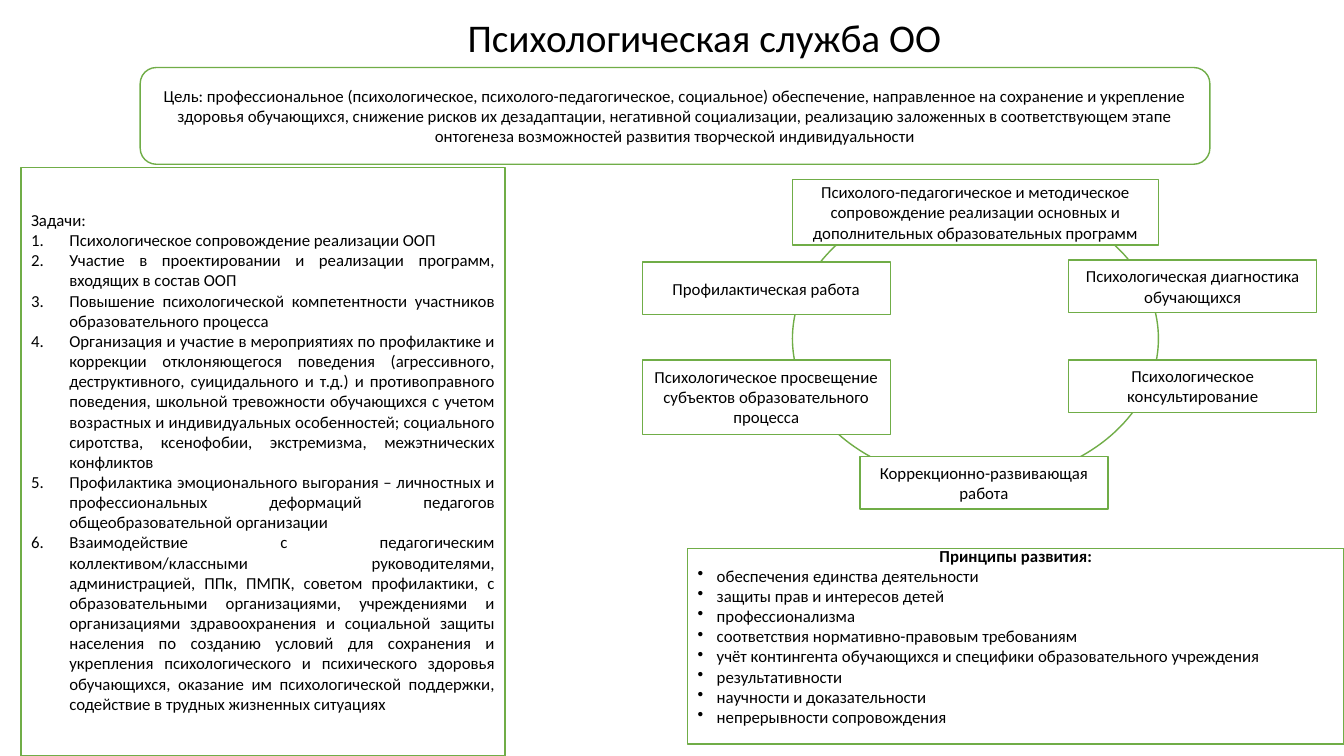
import dataclasses

import lxml.etree
import pptx
import pptx.dml.color
import pptx.enum.shapes
import pptx.enum.text
import pptx.oxml.ns
import pptx.util

Inches = pptx.util.Inches
Align = pptx.enum.text.PP_ALIGN
Preset = pptx.enum.shapes.MSO_SHAPE


@dataclasses.dataclass(frozen=True)
class Theme:
    font: str = "Calibri"
    title_size: int = 28
    body_size: int = 12
    text: str = "000000"
    fill: str = "FFFFFF"
    outline: str = "70AD47"


theme = Theme()


def add_box(shapes, preset, left, top, width, height):
    """Add an outlined shape with wrapped, vertically centred text."""
    box = shapes.add_shape(preset, Inches(left), Inches(top), Inches(width), Inches(height))
    box.shadow.inherit = False
    box.fill.solid()
    box.fill.fore_color.rgb = pptx.dml.color.RGBColor.from_string(theme.fill)
    box.line.color.rgb = pptx.dml.color.RGBColor.from_string(theme.outline)
    box.line.width = pptx.util.Pt(1)
    box.text_frame.word_wrap = True
    box.text_frame.vertical_anchor = pptx.enum.text.MSO_ANCHOR.MIDDLE
    return box


def write(frame, lines, align, size=theme.body_size, bold=False, marker=None, indent=0):
    """Append lines to a text frame; marker is a bullet element name with its attributes."""
    for line in lines:
        first = frame.paragraphs[0]
        paragraph = frame.add_paragraph() if first.runs else first
        paragraph.alignment = align
        run = paragraph.add_run()
        run.text = line
        font_format = {"name": theme.font, "size": pptx.util.Pt(size), "bold": bold}
        for attribute, value in font_format.items():
            setattr(run.font, attribute, value)
        run.font.color.rgb = pptx.dml.color.RGBColor.from_string(theme.text)
        if marker:
            properties = paragraph._p.get_or_add_pPr()
            properties.set("marL", str(Inches(indent)))
            properties.set("indent", str(-Inches(indent)))
            tag, attributes = marker
            lxml.etree.SubElement(properties, pptx.oxml.ns.qn(tag), attributes)


presentation = pptx.Presentation()
presentation.slide_width = Inches(13.33)
presentation.slide_height = Inches(7.5)
slide = presentation.slides.add_slide(presentation.slide_layouts[6])

# Goal
goal = add_box(slide.shapes, Preset.ROUNDED_RECTANGLE, 1.39, 0.67, 10.61, 0.96)
write(goal.text_frame, [
    "Цель: профессиональное (психологическое, психолого-педагогическое, социальное) "
    "обеспечение, направленное на сохранение и укрепление здоровья обучающихся, снижение "
    "рисков их дезадаптации, негативной социализации, реализацию заложенных в "
    "соответствующем этапе онтогенеза возможностей развития творческой индивидуальности",
], Align.CENTER)

# Title
title = slide.shapes.add_textbox(Inches(0.92), Inches(0.12), Inches(12.13), Inches(0.55))
title.text_frame.word_wrap = True
title.text_frame.vertical_anchor = pptx.enum.text.MSO_ANCHOR.MIDDLE
write(title.text_frame, ["Психологическая служба ОО"], Align.CENTER, theme.title_size)
title.text_frame.paragraphs[0].line_spacing = 0.9

# Tasks
tasks = add_box(slide.shapes, Preset.RECTANGLE, 0.21, 1.66, 4.8, 5.84)
write(tasks.text_frame, ["Задачи:"], Align.JUSTIFY)
write(tasks.text_frame, [
    "Психологическое сопровождение реализации ООП",
    "Участие в проектировании и реализации программ, входящих в состав ООП",
    "Повышение психологической компетентности участников образовательного процесса",
    "Организация и участие в мероприятиях по профилактике и коррекции отклоняющегося "
    "поведения (агрессивного, деструктивного, суицидального и т.д.) и противоправного "
    "поведения, школьной тревожности обучающихся с учетом возрастных и индивидуальных "
    "особенностей; социального сиротства, ксенофобии, экстремизма, межэтнических конфликтов",
    "Профилактика эмоционального выгорания – личностных и профессиональных деформаций "
    "педагогов общеобразовательной организации",
    "Взаимодействие с педагогическим коллективом/классными руководителями, "
    "администрацией, ППк, ПМПК, советом профилактики, с образовательными организациями, "
    "учреждениями и организациями здравоохранения и социальной защиты населения по "
    "созданию условий для сохранения и укрепления психологического и психического "
    "здоровья обучающихся, оказание им психологической поддержки, содействие в трудных "
    "жизненных ситуациях",
], Align.JUSTIFY, marker=("a:buAutoNum", {"type": "arabicPeriod"}), indent=0.38)

# Ring of activities, clockwise from the top
activities = slide.shapes.add_group_shape()
ring = add_box(activities.shapes, Preset.OVAL, 7.86, 1.93, 3.63, 2.86)
ring.fill.background()
for left, top, width, height, activity in [
    (7.86, 1.78, 3.63, 0.65, "Психолого-педагогическое и методическое сопровождение "
                             "реализации основных и дополнительных образовательных программ"),
    (10.6, 2.58, 2.46, 0.52, "Психологическая диагностика обучающихся"),
    (10.6, 3.57, 2.46, 0.52, "Психологическое консультирование"),
    (8.53, 4.53, 2.46, 0.52, "Коррекционно-развивающая работа"),
    (6.37, 3.57, 2.46, 0.74, "Психологическое просвещение субъектов образовательного процесса"),
    (6.37, 2.6, 2.46, 0.52, "Профилактическая работа"),
]:
    activity_box = add_box(activities.shapes, Preset.RECTANGLE, left, top, width, height)
    write(activity_box.text_frame, [activity], Align.CENTER)

# Principles, with a deeper bottom margin that lifts the list
principles = add_box(slide.shapes, Preset.RECTANGLE, 6.82, 5.44, 6.51, 1.94)
principles.text_frame.margin_bottom = Inches(0.25)
write(principles.text_frame, ["Принципы развития:"], Align.CENTER, bold=True)
write(principles.text_frame, [
    "обеспечения единства деятельности",
    "защиты прав и интересов детей",
    "профессионализма",
    "соответствия нормативно-правовым требованиям",
    "учёт контингента обучающихся и специфики образовательного учреждения",
    "результативности",
    "научности и доказательности",
    "непрерывности сопровождения",
], Align.JUSTIFY, marker=("a:buChar", {"char": "•"}), indent=0.19)

presentation.save("out.pptx")
